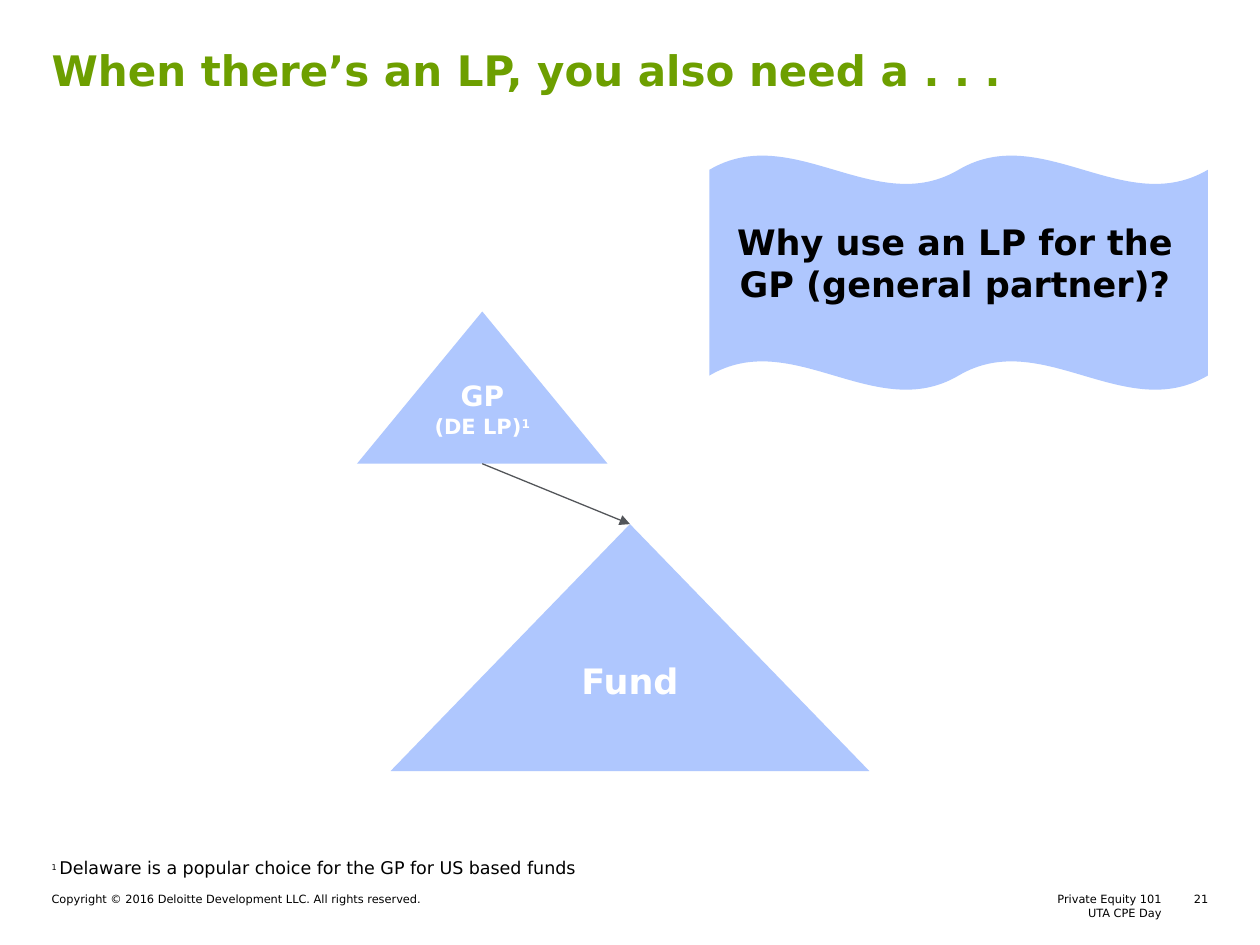
from lxml.etree import SubElement
from pptx import Presentation
from pptx.dml.color import RGBColor
from pptx.enum.shapes import MSO_CONNECTOR, MSO_SHAPE
from pptx.enum.text import MSO_ANCHOR, PP_ALIGN
from pptx.oxml.ns import qn
from pptx.util import Pt

FONT = "DejaVu Sans"
GREEN = "6D9F00"
BLUE = "AFC7FE"
GREY = "53565A"
BLACK = "000000"
WHITE = "FFFFFF"
LEFT = 29.5


def color(hex_string):
    return RGBColor.from_string(hex_string)


def write_text(shape, paragraphs, size=6.5, text_color=BLACK, bold=False,
               align=PP_ALIGN.LEFT, anchor=MSO_ANCHOR.TOP,
               insets=(0, 0, 0, 0), line_spacing=None):
    frame = shape.text_frame
    frame.word_wrap = True
    frame.vertical_anchor = anchor
    frame.margin_left, frame.margin_top, frame.margin_right, frame.margin_bottom = map(Pt, insets)
    for index, runs in enumerate(paragraphs):
        paragraph = frame.add_paragraph() if index else frame.paragraphs[0]
        paragraph.alignment = align
        paragraph.space_before = Pt(0)
        paragraph.line_spacing = line_spacing
        for text, *options in runs:
            run = paragraph.add_run()
            run.text = text
            run.font.name = FONT
            run.font.size = Pt(options[0] if options else size)
            run.font.bold = bold
            run.font.color.rgb = color(text_color)
            if "superscript" in options:
                run.font._element.set("baseline", "30000")


def add_title(slide, text):
    title = slide.shapes.title
    title.left, title.top, title.width, title.height = map(Pt, (LEFT, 25.2, 661, 54.7))
    write_text(title, [[(text,)]], size=24, text_color=GREEN, bold=True)


def add_text(slide, box, paragraphs, **text_format):
    shape = slide.shapes.add_textbox(*map(Pt, box))
    write_text(shape, paragraphs, **text_format)


def add_filled_shape(slide, kind, box):
    shape = slide.shapes.add_shape(kind, *map(Pt, box))
    shape.shadow.inherit = False
    shape.fill.solid()
    shape.fill.fore_color.rgb = color(BLUE)
    shape.line.fill.background()
    return shape


def add_triangle(slide, box, paragraphs, **text_format):
    triangle = add_filled_shape(slide, MSO_SHAPE.ISOSCELES_TRIANGLE, box)
    write_text(triangle, paragraphs, text_color=WHITE, bold=True,
               align=PP_ALIGN.CENTER, **text_format)
    return triangle


def add_arrow(slide, upper, lower):
    arrow = slide.shapes.add_connector(MSO_CONNECTOR.STRAIGHT, 0, 0, 0, 0)
    arrow.begin_connect(upper, 3)
    arrow.end_connect(lower, 0)
    arrow.begin_x = upper.left + upper.width // 2
    arrow.begin_y = upper.top + upper.height
    arrow.end_x = lower.left + lower.width // 2
    arrow.end_y = lower.top
    arrow.line.color.rgb = color(GREY)
    arrow.line.width = Pt(0.75)
    SubElement(arrow.line._get_or_add_ln(), qn("a:tailEnd"), type="triangle")
    SubElement(arrow._element.spPr, qn("a:effectLst"))


def main():
    presentation = Presentation()
    presentation.slide_width = Pt(720)
    presentation.slide_height = Pt(540)
    slide = presentation.slides.add_slide(presentation.slide_layouts[5])

    add_text(slide, (374.4, 509.8, 289.4, 16),
             [[("Private Equity 101",)], [("UTA CPE Day",)]], align=PP_ALIGN.RIGHT)
    add_text(slide, (LEFT, 509.8, 316, 16),
             [[("Copyright © 2016 Deloitte Development LLC. All rights reserved.",)]])
    add_text(slide, (672.5, 509.8, 18, 8), [[("21",)]], align=PP_ALIGN.RIGHT)

    add_title(slide, "When there’s an LP, you also need a . . .")
    fund = add_triangle(slide, (223.2, 299.5, 273.6, 141.1), [[("Fund",)]], size=20,
                        anchor=MSO_ANCHOR.MIDDLE, insets=(7.2, 3.6, 7.2, 36))
    add_text(slide, (LEFT, 489.6, 352, 26),
             [[("1 ", 8, "superscript"),
               ("Delaware is a popular choice for the GP for US based funds", 10)]])
    add_filled_shape(slide, MSO_SHAPE.DOUBLE_WAVE, (405.4, 88.6, 284.8, 134.4))
    add_text(slide, (410.4, 126, 270.7, 48.2),
             [[("Why use an LP for the GP (general partner)?",)]],
             size=20, bold=True, align=PP_ALIGN.CENTER)
    general_partner = add_triangle(
        slide, (204, 178, 143.2, 87),
        [[("GP", 16)], [("(DE LP)", 12), ("1", 12, "superscript")]],
        anchor=MSO_ANCHOR.BOTTOM, insets=(7.2, 0, 7.2, 14.4), line_spacing=1.06)
    add_arrow(slide, general_partner, fund)

    presentation.save("out.pptx")


if __name__ == "__main__":
    main()
